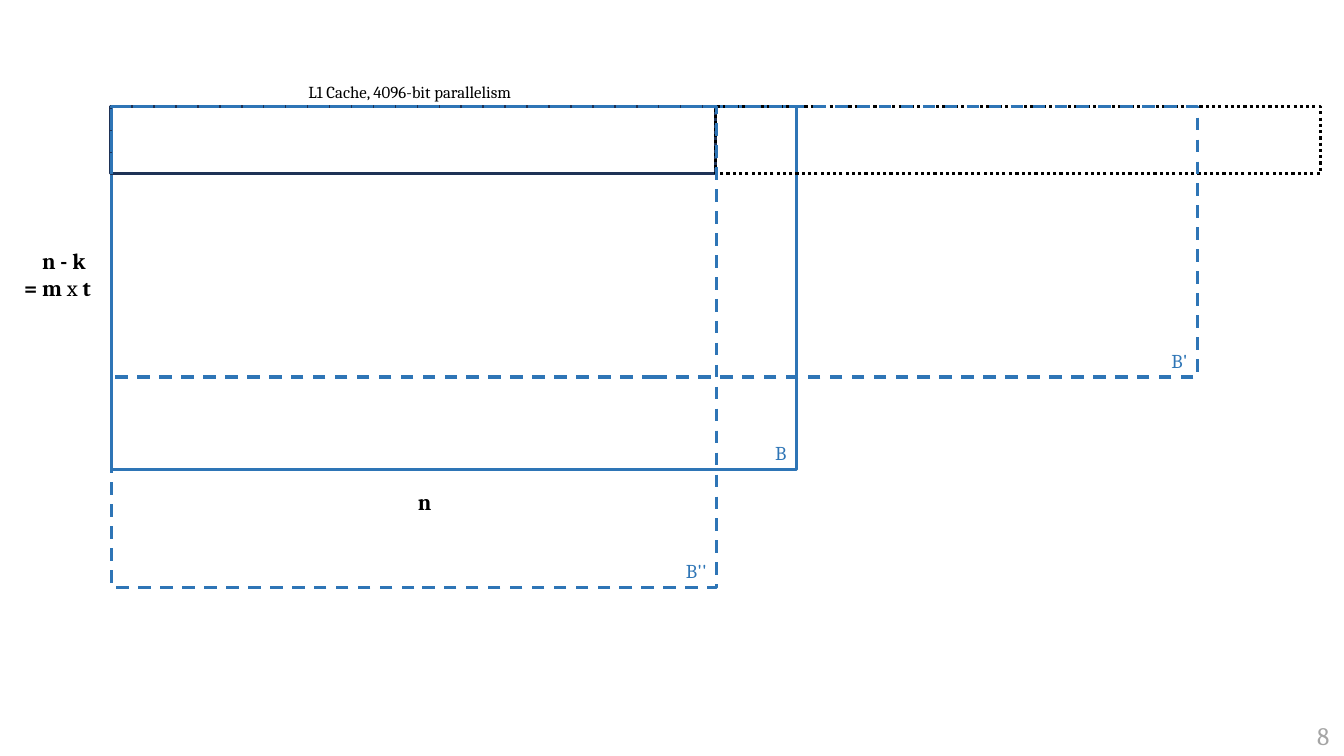
from pptx import Presentation
from pptx.dml.color import RGBColor
from pptx.enum.dml import MSO_LINE
from pptx.enum.shapes import MSO_SHAPE
from pptx.enum.text import MSO_ANCHOR, PP_ALIGN
from pptx.util import Pt

BLUE = RGBColor(0x2E, 0x75, 0xB6)
NAVY = RGBColor(0x1E, 0x32, 0x56)
BLACK = RGBColor(0, 0, 0)
GRAY = RGBColor(0xA5, 0xA5, 0xA5)

LEFT, TOP = 79.9, 76.3
CACHE_WIDTH, CACHE_HEIGHT = 432, 47.5

BLOCKS = [
    ("B", 0, 488.9, 259.2, BLUE, MSO_LINE.SOLID),
    ("", -0.7, CACHE_WIDTH, CACHE_HEIGHT, NAVY, MSO_LINE.SOLID),
    ("", CACHE_WIDTH - 0.7, CACHE_WIDTH, CACHE_HEIGHT, BLACK, MSO_LINE.ROUND_DOT),
    ("B''", 0, CACHE_WIDTH, 343.4, BLUE, MSO_LINE.DASH),
    ("B'", 0, 775.4, 193, BLUE, MSO_LINE.DASH),
]

LABELS = [
    ((213.1, 54.7, 195.8, 21.6), 12, BLACK,
     [(0, [("L1 Cache, 4096-bit parallelism", False)])]),
    ((291.4, 344.9, 38.9, 26.6), 16, BLACK, [(0, [("n", True)])]),
    ((933.8, 511.2, 25.9, 28.8), 18, GRAY, [(0, [("8", False)])]),
    ((10.1, 172.8, 76.3, 46.1), 16, BLACK, [
        (12.9, [("n - k", True)]),
        (0, [("= m", True), (" x ", False), ("t", True)]),
    ]),
]


def add_run(paragraph, text, size, color, bold=False):
    run = paragraph.add_run()
    run.text = text
    run.font.name = "Cambria"
    run.font.size = Pt(size)
    run.font.bold = bold
    run.font.color.rgb = color


def add_block(slide, name, offset, width, height, color, dash):
    block = slide.shapes.add_shape(
        MSO_SHAPE.RECTANGLE, Pt(LEFT + offset), Pt(TOP), Pt(width), Pt(height))
    block.shadow.inherit = False
    block.fill.background()
    block.line.color.rgb = color
    block.line.width = Pt(2.25)
    block.line.dash_style = dash
    if name:
        block.text_frame.vertical_anchor = MSO_ANCHOR.BOTTOM
        paragraph = block.text_frame.paragraphs[0]
        paragraph.alignment = PP_ALIGN.RIGHT
        add_run(paragraph, name, 14, color)


def add_label(slide, place, size, color, lines):
    frame = slide.shapes.add_textbox(*map(Pt, place)).text_frame
    frame.word_wrap = True
    for number, (indent, runs) in enumerate(lines):
        paragraph = frame.add_paragraph() if number else frame.paragraphs[0]
        if indent:
            paragraph._p.get_or_add_pPr().set("indent", str(Pt(indent)))
        for text, bold in runs:
            add_run(paragraph, text, size, color, bold)


def main():
    deck = Presentation()
    deck.slide_width, deck.slide_height = Pt(960), Pt(540)
    slide = deck.slides.add_slide(deck.slide_layouts[6])
    for block in BLOCKS:
        add_block(slide, *block)
    for label in LABELS:
        add_label(slide, *label)
    deck.save("out.pptx")


if __name__ == "__main__":
    main()
